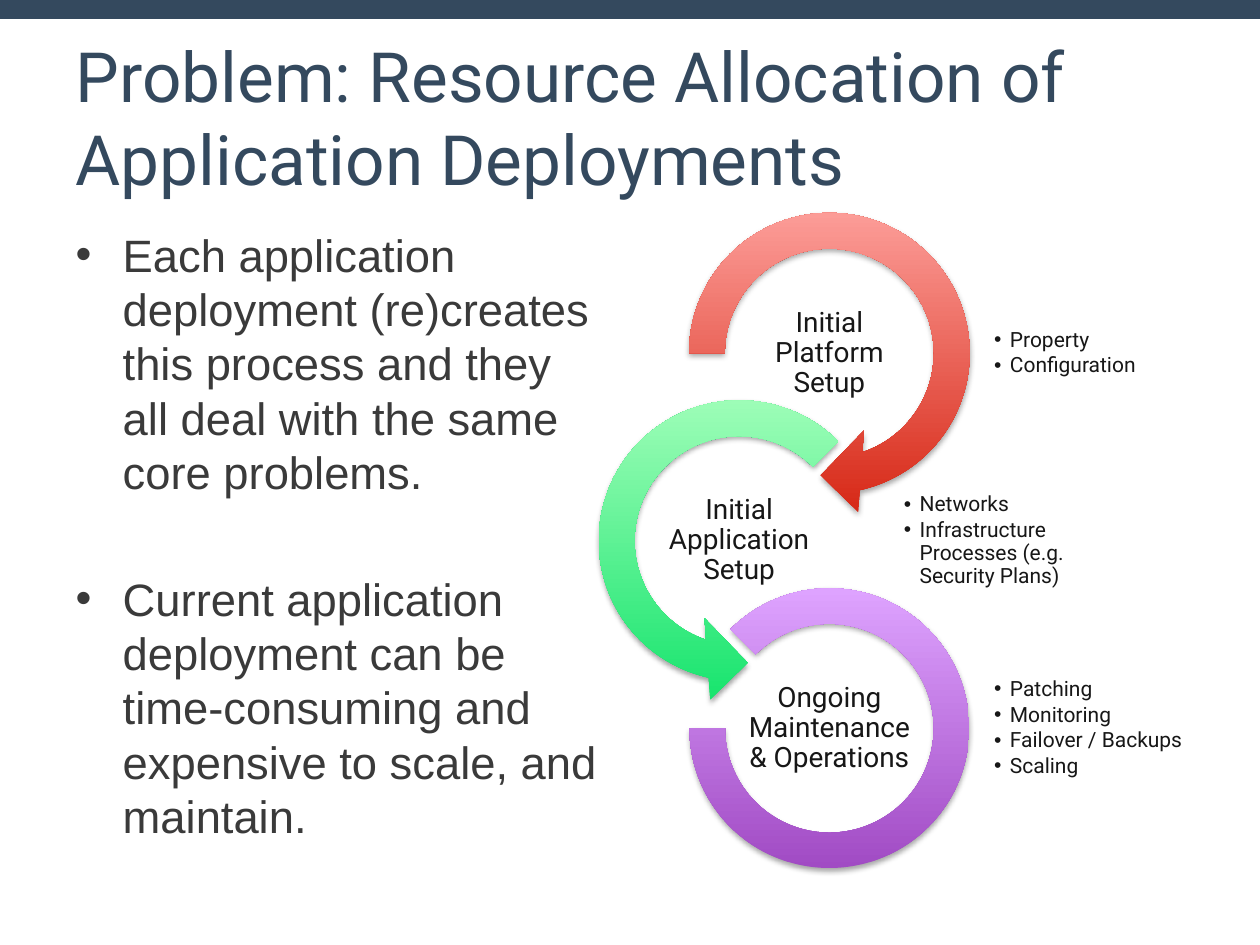
from dataclasses import dataclass

from lxml import etree
from pptx import Presentation
from pptx.dml.color import RGBColor
from pptx.enum.shapes import MSO_SHAPE
from pptx.enum.text import MSO_ANCHOR, MSO_AUTO_SIZE, PP_ALIGN
from pptx.oxml.ns import qn
from pptx.util import Cm, Pt

RECTANGLE = MSO_SHAPE.RECTANGLE
RIGHT_ARROW_RING = MSO_SHAPE.CIRCULAR_ARROW
LEFT_ARROW_RING = MSO_SHAPE.LEFT_CIRCULAR_ARROW
OPEN_RING = MSO_SHAPE.BLOCK_ARC
LEFT, CENTER = PP_ALIGN.LEFT, PP_ALIGN.CENTER
TOP, MIDDLE = MSO_ANCHOR.TOP, MSO_ANCHOR.MIDDLE
NO_AUTOFIT = MSO_AUTO_SIZE.NONE


@dataclass(frozen=True)
class Theme:
    heading_font: str = "Roboto"
    body_font: str = "Arial"
    title_size: float = 39.6
    body_size: float = 25.9
    stage_size: float = 16
    detail_size: float = 12
    navy: str = "34495E"
    body_text: str = "3A3A3A"
    diagram_text: str = "171717"
    shadow: str = "000000"
    red: tuple = ("D62715", "FFA5A1")
    green: tuple = ("16E46D", "A7FFBD")
    purple: tuple = ("A14BC4", "DEA3FF")


THEME = Theme()

PROBLEMS = [
    "Each application deployment (re)creates this process and they all deal "
    "with the same core problems.",
    "Current application deployment can be time-consuming and expensive to "
    "scale, and maintain.",
]

# Label, details, ring shape, ring diameter in cm, adjustments, gradient, centre x in cm
STAGES = [
    ("Initial Platform Setup", ["Property", "Configuration"],
     RIGHT_ARROW_RING, 6.58, (0.11, 11.42, 45, 108, 0.125), THEME.red, 5.11),
    ("Initial Application Setup",
     ["Networks", "Infrastructure Processes (e.g. Security Plans)"],
     LEFT_ARROW_RING, 6.58, (0.11, 11.42, 63, 189, 0.125), THEME.green, 3.29),
    ("Ongoing Maintenance & Operations",
     ["Patching", "Monitoring", "Failover / Backups", "Scaling"],
     OPEN_RING, 5.64, (135, 108, 0.127), THEME.purple, 5.11),
]


def place(shape, box):
    shape.left, shape.top, shape.width, shape.height = (Cm(v) for v in box)


def add_bullet(paragraph, indent):
    props = paragraph._p.get_or_add_pPr()
    props.set("marL", str(Cm(indent)))
    props.set("indent", str(-Cm(indent)))
    etree.SubElement(props, qn("a:buFont"), typeface="Arial")
    etree.SubElement(props, qn("a:buChar"), char="•")


def write(shape, texts, *, font, size, color, align=LEFT, anchor=TOP, inset=None,
          indent=None, line=None, gap=None, after=None):
    """Fill a shape with one paragraph per text; gap is the space between them."""
    frame = shape.text_frame
    frame.word_wrap = True
    frame.auto_size = NO_AUTOFIT
    frame.vertical_anchor = anchor
    if inset is not None:
        frame.margin_left = frame.margin_right = Cm(inset)
        frame.margin_top = frame.margin_bottom = Cm(inset)
    for index, text in enumerate(texts):
        paragraph = frame.add_paragraph() if index else frame.paragraphs[0]
        if indent:
            add_bullet(paragraph, indent)
        paragraph.alignment = align
        paragraph.space_before = Pt(gap if gap and index else 0)
        if line:
            paragraph.line_spacing = line
        if after:
            paragraph.space_after = Pt(after)
        run = paragraph.add_run()
        run.text = text
        run.font.name = font
        run.font.size = Pt(size)
        run.font.color.rgb = RGBColor.from_string(color)


def add_soft_shadow(shape):
    effects = etree.SubElement(shape._element.spPr, qn("a:effectLst"))
    shadow = etree.SubElement(
        effects, qn("a:outerShdw"), blurRad=str(Pt(3.1)), dist=str(Pt(1.8)),
        dir="5400000", rotWithShape="0")
    color = etree.SubElement(shadow, qn("a:srgbClr"), val=THEME.shadow)
    etree.SubElement(color, qn("a:alpha"), val="35000")


def add_ring(shapes, kind, box, adjustments, colors):
    ring = shapes.add_shape(kind, *(Cm(v) for v in box))
    for index, value in enumerate(adjustments):
        ring.adjustments[index] = value
    ring.fill.gradient()
    ring.fill.gradient_angle = 90
    for stop, color in zip(ring.fill.gradient_stops, colors):
        stop.color.rgb = RGBColor.from_string(color)
    ring.line.fill.background()
    add_soft_shadow(ring)


def add_top_bar(slide, box):
    bar = slide.shapes.add_shape(RECTANGLE, *(Cm(v) for v in box))
    bar.shadow.inherit = False
    bar.fill.solid()
    bar.fill.fore_color.rgb = RGBColor.from_string(THEME.navy)
    bar.line.fill.background()


def fill_title(slide, box):
    title = slide.shapes.title
    place(title, box)
    write(title, ["Problem: Resource Allocation of Application Deployments"],
          font=THEME.heading_font, size=THEME.title_size, color=THEME.navy,
          anchor=MIDDLE)


def fill_problems(slide, box):
    problems = slide.placeholders[1]
    place(problems, box)
    write(problems, PROBLEMS, font=THEME.body_font, size=THEME.body_size,
          color=THEME.body_text, indent=0.95, line=Pt(31), gap=41.5)


def add_process(slide, box):
    """Three stacked rings, each with a label inside and details to its right."""
    left, top, _, height = box
    radius = STAGES[0][3] / 2
    label_width, label_height = 3.66, 1.83
    detail_width, detail_height = 3.94, 2.62
    step = (height - radius - STAGES[-1][3] / 2) / (len(STAGES) - 1)
    shapes = slide.shapes.add_group_shape().shapes
    diagram_type = dict(font=THEME.heading_font, color=THEME.diagram_text,
                        anchor=MIDDLE, inset=0.03, line=0.9)

    for index, (name, details, kind, size, adjustments, colors, offset) in enumerate(STAGES):
        x, y = left + offset, top + radius + index * step
        add_ring(shapes, kind, (x - size / 2, y - size / 2, size, size),
                 adjustments, colors)

        detail_list = shapes.add_textbox(
            Cm(x + radius), Cm(y - detail_height / 2), Cm(detail_width), Cm(detail_height))
        write(detail_list, details, size=THEME.detail_size, indent=0.32, after=1.8,
              **diagram_type)

        label = shapes.add_textbox(
            Cm(x - label_width / 2), Cm(y - label_height / 2),
            Cm(label_width), Cm(label_height))
        write(label, [name], size=THEME.stage_size, align=CENTER, after=5.6,
              **diagram_type)


def main():
    deck = Presentation()
    deck.slide_width, deck.slide_height = Cm(25.4), Cm(19.05)
    slide = deck.slides.add_slide(deck.slide_layouts[1])
    add_top_bar(slide, (0, 0, 25.4, 0.38))
    fill_title(slide, (1.27, 0.76, 22.86, 3.18))
    fill_problems(slide, (1.27, 4.45, 11.23, 12.57))
    add_process(slide, (11.61, 3.83, 12.33, 13.67))
    deck.save("out.pptx")


if __name__ == "__main__":
    main()
